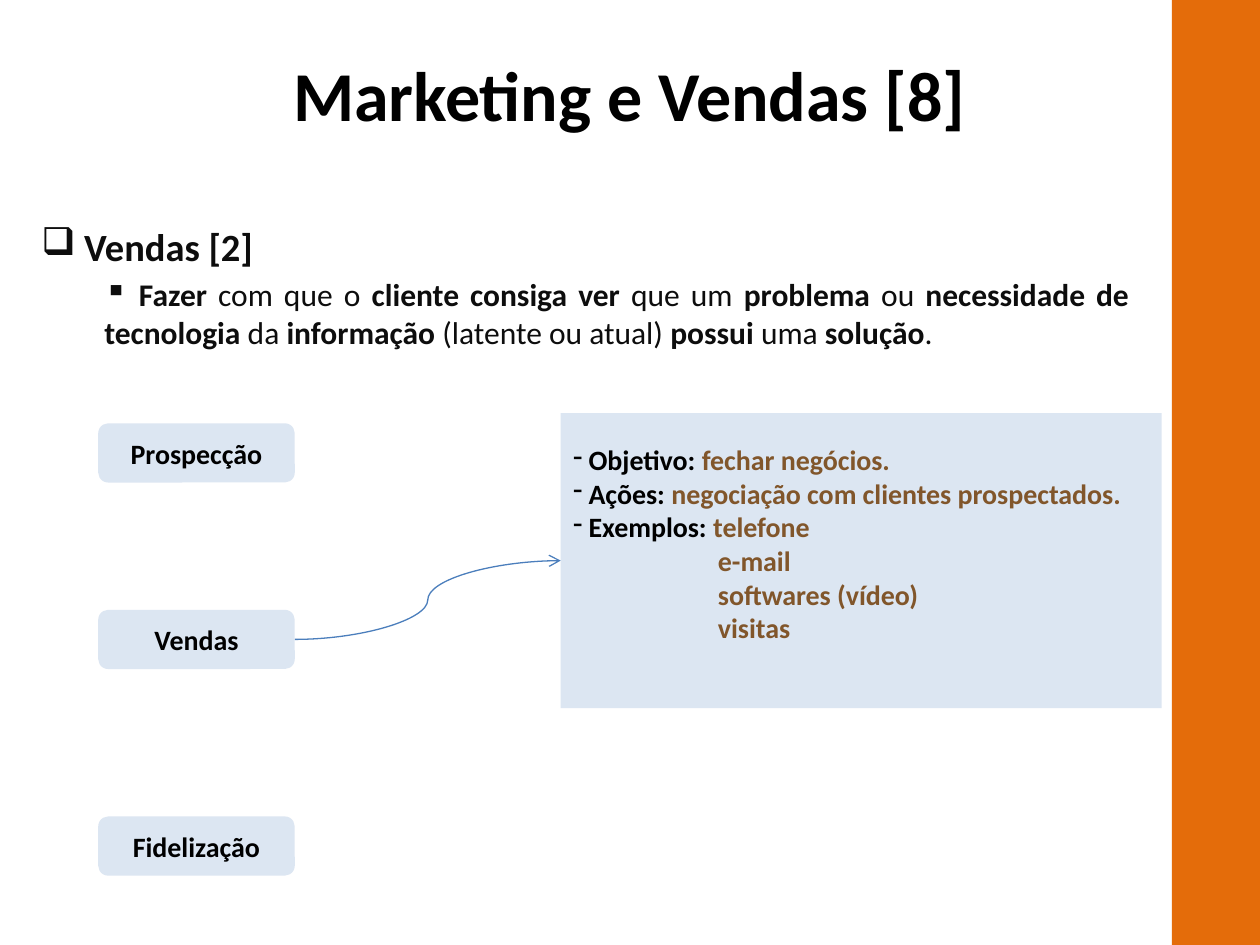
"""Build the sales slide: title, goal, three stages and a detail panel."""
from lxml import etree
from pptx import Presentation
from pptx.dml.color import RGBColor
from pptx.enum.shapes import MSO_CONNECTOR, MSO_SHAPE
from pptx.enum.text import MSO_ANCHOR, PP_ALIGN
from pptx.oxml.ns import qn
from pptx.util import Inches, Pt

RECT, ROUND = MSO_SHAPE.RECTANGLE, MSO_SHAPE.ROUNDED_RECTANGLE
CURVE = MSO_CONNECTOR.CURVE
LEFT, CENTER, JUST = PP_ALIGN.LEFT, PP_ALIGN.CENTER, PP_ALIGN.JUSTIFY
TOP, MIDDLE = MSO_ANCHOR.TOP, MSO_ANCHOR.MIDDLE
BLACK = RGBColor(0x00, 0x00, 0x00)
DARK = RGBColor(0x0D, 0x0D, 0x0D)
BROWN = RGBColor(0x81, 0x56, 0x2B)
ORANGE = RGBColor(0xE4, 0x6C, 0x0A)
PALE = RGBColor(0xDC, 0xE6, 0xF2)
BLUE = RGBColor(0x4B, 0x7E, 0xBC)

GOAL = (" *Fazer* com que o *cliente consiga ver* que um *problema* ou "
        "*necessidade de tecnologia* da *informação* (latente ou atual) "
        "*possui* uma *solução*.")
STAGES = [("Prospecção", 3.36), ("Vendas", 4.84), ("Fidelização", 6.48)]
FACTS = [("Objetivo", "fechar negócios."),
         ("Ações", "negociação com clientes prospectados."),
         ("Exemplos", "telefone")]
MORE = ["e-mail", "softwares (vídeo)", "visitas"]


def set_frame(shape, anchor=MIDDLE, bottom=0.05):
    frame = shape.text_frame
    frame.word_wrap = True
    frame.vertical_anchor = anchor
    frame.margin_bottom = Inches(bottom)
    return frame


def add_text(frame, *runs, size=16, align=LEFT, bullet=None, indent=0, before=0):
    """Add a paragraph of (text, color, bold) runs."""
    para = frame.paragraphs[0]
    if para.runs:
        para = frame.add_paragraph()
    para.alignment = align
    para.space_before = Pt(before)
    props = para._p.get_or_add_pPr()
    props.set("marL", str(Inches(indent)))
    props.set("indent", "0")
    if bullet:
        etree.SubElement(props, qn("a:buChar")).set("char", bullet)
    for text, color, bold in runs:
        run = para.add_run()
        run.text = text
        run.font.name = "Calibri"
        run.font.size = Pt(size)
        run.font.bold = bold
        run.font.color.rgb = color


def add_box(slide, kind, area, fill):
    box = slide.shapes.add_shape(kind, *map(Inches, area))
    box.shadow.inherit = False
    box.fill.solid()
    box.fill.fore_color.rgb = fill
    box.line.fill.background()
    return box


def add_area(slide, area, anchor):
    return set_frame(slide.shapes.add_textbox(*map(Inches, area)), anchor)


def add_stage(slide, name, top):
    box = add_box(slide, ROUND, (0.78, top, 1.56, 0.47), PALE)
    add_text(set_frame(box), (name, BLACK, True), align=CENTER)
    return box


def add_panel(slide):
    box = add_box(slide, RECT, (4.45, 3.28, 4.77, 2.34), PALE)
    frame = set_frame(box, bottom=0.32)
    for label, value in FACTS:
        add_text(frame, (f" {label}: ", BLACK, True), (value, BROWN, True), bullet="-")
    for item in MORE:
        add_text(frame, (item, BROWN, True), indent=1.15)
    return box


def add_arrow(slide, start, end):
    arrow = slide.shapes.add_connector(CURVE, 0, 0, 0, 0)
    arrow.begin_connect(start, 3)
    arrow.end_connect(end, 1)
    arrow.line.color.rgb = BLUE
    arrow.line.width = Pt(0.75)
    line = arrow.line._get_or_add_ln()
    etree.SubElement(line, qn("a:tailEnd")).set("type", "arrow")
    etree.SubElement(arrow._element.spPr, qn("a:effectLst"))


def main():
    deck = Presentation()
    deck.slide_width, deck.slide_height = Inches(10), Inches(7.5)
    slide = deck.slides.add_slide(deck.slide_layouts[6])

    title = add_area(slide, (0.23, 0.16, 9.53, 1.17), MIDDLE)
    add_text(title, ("Marketing e Vendas [8]", BLACK, True), size=40, align=CENTER)

    body = add_area(slide, (0.23, 1.72, 8.83, 5.94), TOP)
    add_text(body, (" Vendas [2]", DARK, True), size=22, align=JUST,
             bullet="❑", before=4.4)
    runs = [(part, DARK, i % 2 == 1) for i, part in enumerate(GOAL.split("*"))]
    add_text(body, *runs, size=18, align=JUST, bullet="▪", indent=0.5, before=3.6)

    add_box(slide, RECT, (9.3, 0, 0.7, 7.5), ORANGE)
    boxes = {name: add_stage(slide, name, top) for name, top in STAGES}
    add_arrow(slide, boxes["Vendas"], add_panel(slide))
    deck.save("out.pptx")


if __name__ == "__main__":
    main()
